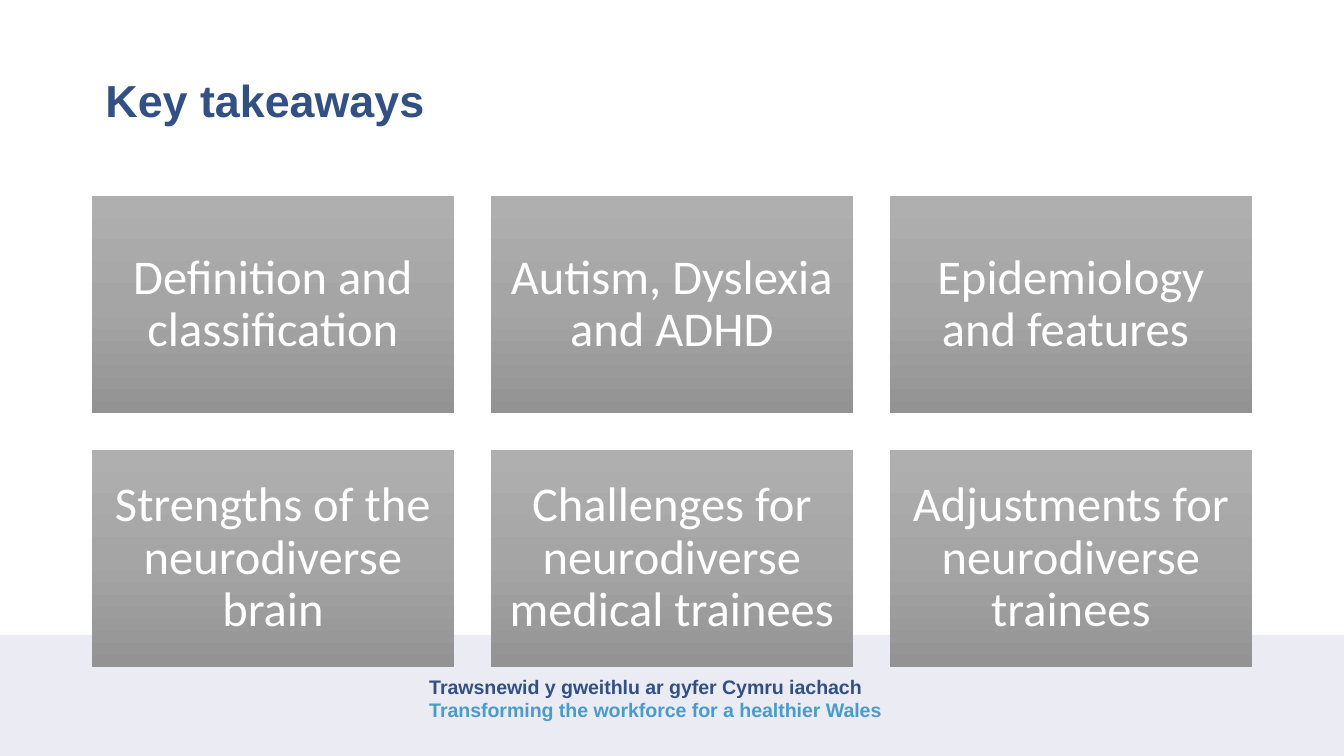
import copy

import pptx
import pptx.dml.color
import pptx.enum.shapes
import pptx.enum.text
import pptx.util

# Content
TITLE = "Key takeaways"
TAKEAWAYS = [
    ["Definition and classification", "Autism, Dyslexia and ADHD", "Epidemiology and features "],
    ["Strengths of the neurodiverse brain", "Challenges for neurodiverse medical trainees",
     "Adjustments for neurodiverse trainees"],
]
FOOTER = [
    ("Trawsnewid y gweithlu ar gyfer Cymru iachach", "navy"),
    ("Transforming the workforce for a healthier Wales", "sky"),
]

COLOURS = {"navy": "325083", "sky": "489CC9", "band": "EBEBF3", "white": "FFFFFF"}
CARD_GRADIENT = [(0, "AFAFAF"), (0.5, "A5A5A5"), (1, "939393")]

# Layout in px
SLIDE_WIDTH, SLIDE_HEIGHT = 1344, 756
EMU_PER_PX = 914400 / 134.4
BAND_TOP = 635
GRID_LEFT, GRID_TOP = 92, 196
CARD_WIDTH, CARD_HEIGHT, GAP = 362, 217, 37
CARD_INSET = 15


def px(length):
    return pptx.util.Emu(round(length * EMU_PER_PX))


def box(left, top, width, height):
    return px(left), px(top), px(width), px(height)


def rgb(value):
    return pptx.dml.color.RGBColor.from_string(value)


def set_font(paragraph, name, size, colour, bold=False):
    font = paragraph.font
    font.name, font.size, font.bold = name, pptx.util.Pt(size), bold
    font.color.rgb = rgb(COLOURS[colour])


def add_rectangle(slide, *bounds):
    shape = slide.shapes.add_shape(pptx.enum.shapes.MSO_SHAPE.RECTANGLE, *box(*bounds))
    shape.shadow.inherit = False
    shape.line.fill.background()
    return shape


def fill_gradient(shape):
    fill = shape.fill
    fill.gradient()
    fill.gradient_angle = 270
    # The default gradient has two stops; add one in the middle
    stop_list = shape._element.spPr.find(".//" + pptx.oxml.ns.qn("a:gsLst"))
    stop_list.insert(1, copy.deepcopy(stop_list[0]))
    for stop, (position, colour) in zip(fill.gradient_stops, CARD_GRADIENT):
        stop.position = position
        stop.color.rgb = rgb(colour)


def add_card(slide, row, column, text):
    shape = add_rectangle(slide, GRID_LEFT + column * (CARD_WIDTH + GAP),
                          GRID_TOP + row * (CARD_HEIGHT + GAP), CARD_WIDTH, CARD_HEIGHT)
    fill_gradient(shape)
    frame = shape.text_frame
    frame.word_wrap = True
    frame.vertical_anchor = pptx.enum.text.MSO_ANCHOR.MIDDLE
    frame.margin_left = frame.margin_right = px(CARD_INSET)
    frame.margin_top = frame.margin_bottom = px(CARD_INSET)
    frame.text = text
    paragraph = frame.paragraphs[0]
    paragraph.alignment = pptx.enum.text.PP_ALIGN.CENTER
    paragraph.line_spacing = 0.9
    set_font(paragraph, "Calibri", 26, "white")


def main():
    presentation = pptx.Presentation()
    presentation.slide_width, presentation.slide_height = px(SLIDE_WIDTH), px(SLIDE_HEIGHT)
    slide = presentation.slides.add_slide(presentation.slide_layouts[5])

    # Footer band and slogan
    band = add_rectangle(slide, 0, BAND_TOP, SLIDE_WIDTH, SLIDE_HEIGHT - BAND_TOP)
    band.fill.solid()
    band.fill.fore_color.rgb = rgb(COLOURS["band"])
    frame = slide.shapes.add_textbox(*box(416, 668, 504, 61)).text_frame
    frame.word_wrap = True
    frame.auto_size = pptx.enum.text.MSO_AUTO_SIZE.SHAPE_TO_FIT_TEXT
    frame.text = "\n".join(line for line, _ in FOOTER)
    for paragraph, (_, colour) in zip(frame.paragraphs, FOOTER):
        set_font(paragraph, "Arial", 10.5, colour, bold=True)

    # Title
    title = slide.shapes.title
    title.left, title.top, title.width, title.height = box(92, 30, 1159, 146)
    frame = title.text_frame
    frame.text = TITLE
    frame.auto_size = pptx.enum.text.MSO_AUTO_SIZE.NONE
    frame.vertical_anchor = pptx.enum.text.MSO_ANCHOR.MIDDLE
    paragraph = frame.paragraphs[0]
    paragraph.alignment = pptx.enum.text.PP_ALIGN.LEFT
    paragraph.line_spacing = 0.9
    set_font(paragraph, "Arial", 24, "navy", bold=True)

    # Grid of takeaway cards
    for row, texts in enumerate(TAKEAWAYS):
        for column, text in enumerate(texts):
            add_card(slide, row, column, text)

    presentation.save("out.pptx")


if __name__ == "__main__":
    main()
